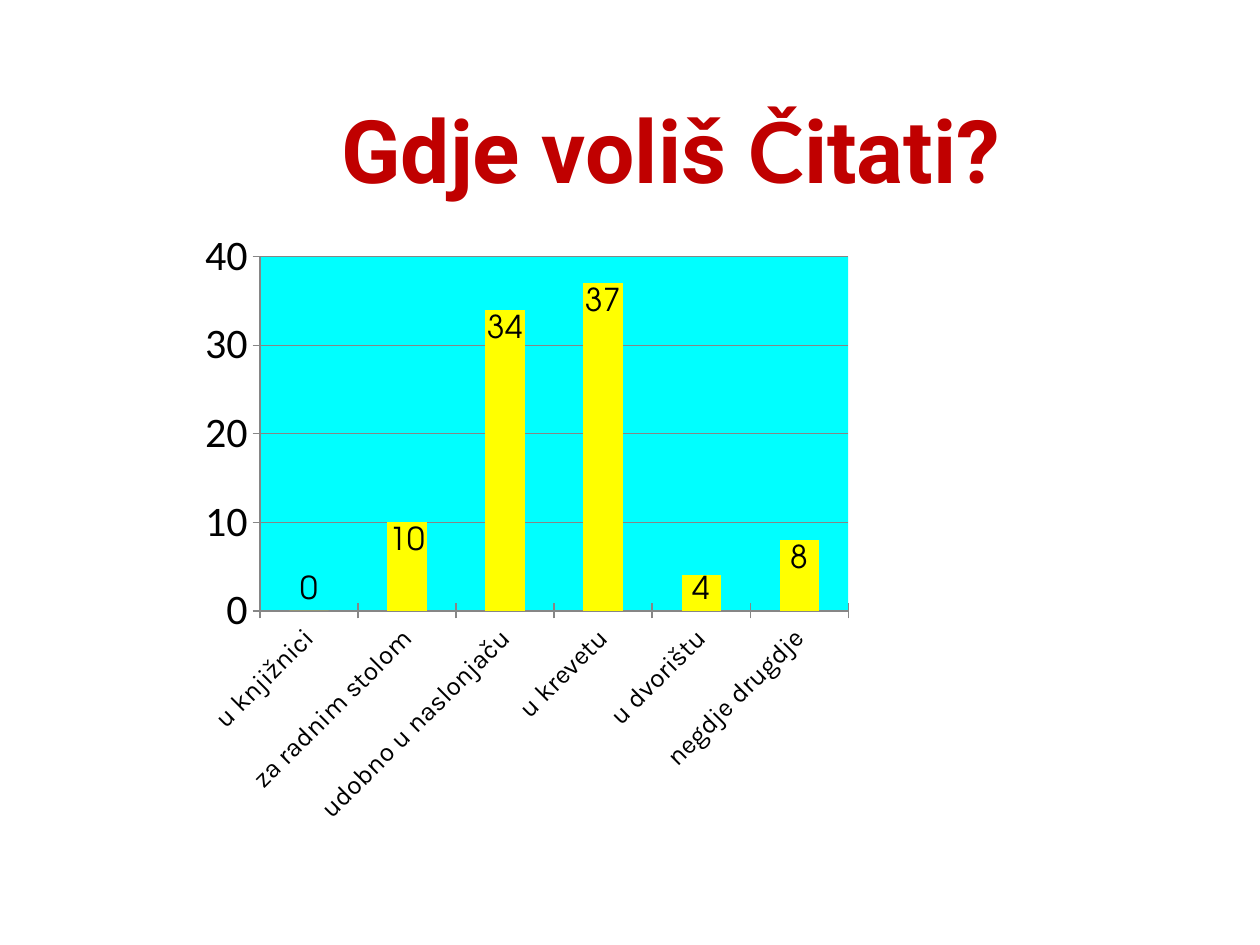
from lxml.etree import fromstring
from pptx import Presentation
from pptx.chart.data import CategoryChartData
from pptx.dml.color import RGBColor
from pptx.enum.chart import XL_CHART_TYPE, XL_LABEL_POSITION, XL_TICK_MARK
from pptx.enum.text import MSO_ANCHOR, PP_ALIGN
from pptx.oxml.ns import nsdecls, qn
from pptx.util import Pt

RED = RGBColor(0xC0, 0x00, 0x00)
CYAN = RGBColor(0x00, 0xFF, 0xFF)
YELLOW = RGBColor(0xFF, 0xFF, 0x00)
BLACK = RGBColor(0x00, 0x00, 0x00)
GREY = RGBColor(0x86, 0x86, 0x86)

PLACES = {
    "u knjižnici": 0,
    "za radnim stolom": 10,
    "udobno u naslonjaču": 34,
    "u krevetu": 37,
    "u dvorištu": 4,
    "negdje drugdje": 8,
}
LOW = (0, 4)


class Deck:
    label_font = "TeX Gyre Adventor"
    label_size = 18

    def __init__(self, width, height):
        self.show = Presentation()
        self.show.slide_width = Pt(width)
        self.show.slide_height = Pt(height)
        self.slide = self.show.slides.add_slide(self.show.slide_layouts[5])

    def style(self, font, name, size, color=BLACK):
        font.name = name
        font.size = Pt(size)
        font.color.rgb = color

    def title(self, box, parts):
        shape = self.slide.shapes.title
        shape.left, shape.top, shape.width, shape.height = map(Pt, box)
        frame = shape.text_frame
        frame.vertical_anchor = MSO_ANCHOR.MIDDLE
        line = frame.paragraphs[0]
        line.alignment = PP_ALIGN.CENTER
        line.font.bold = True
        for text, name, size in parts:
            run = line.add_run()
            run.text = text
            self.style(run.font, name, size, RED)

    def axis(self, axis, name, size):
        axis.major_tick_mark = XL_TICK_MARK.CROSS
        axis.format.line.color.rgb = GREY
        self.style(axis.tick_labels.font, name, size)

    def area(self, chart, left, top, width, height):
        plot = chart._chartSpace.chart.plotArea
        old = plot.find(qn("c:layout"))
        if old is not None:
            plot.remove(old)
        plot.insert(0, fromstring(
            f'<c:layout {nsdecls("c")}><c:manualLayout>'
            '<c:layoutTarget val="inner"/>'
            '<c:xMode val="edge"/><c:yMode val="edge"/>'
            f'<c:x val="{left}"/><c:y val="{top}"/>'
            f'<c:w val="{width}"/><c:h val="{height}"/>'
            '</c:manualLayout></c:layout>'))
        plot.append(fromstring(
            f'<c:spPr {nsdecls("c", "a")}><a:solidFill>'
            f'<a:srgbClr val="{CYAN}"/></a:solidFill></c:spPr>'))

    def chart(self, box, name, values):
        data = CategoryChartData()
        data.categories = list(values)
        data.add_series(name, list(values.values()))
        chart = self.slide.shapes.add_chart(
            XL_CHART_TYPE.COLUMN_STACKED, *map(Pt, box), data).chart
        chart.has_title = False
        chart.has_legend = False
        self.style(chart.font, self.label_font, self.label_size)

        self.axis(chart.category_axis, "Karla", 15)
        body = chart.category_axis._element.find(qn("c:txPr")).find(qn("a:bodyPr"))
        body.set("rot", str(-45 * 60000))
        body.set("vert", "horz")

        scale = chart.value_axis
        self.axis(scale, "Calibri", 24)
        scale.minimum_scale, scale.maximum_scale, scale.major_unit = 0, 40, 10
        scale.has_major_gridlines = True
        scale.major_gridlines.format.line.color.rgb = GREY

        plot = chart.plots[0]
        plot.vary_by_categories = False
        plot.gap_width, plot.overlap = 150, 100
        bars = plot.series[0]
        bars.format.fill.solid()
        bars.format.fill.fore_color.rgb = YELLOW
        labels = bars.data_labels
        labels.show_value = True
        labels.position = XL_LABEL_POSITION.INSIDE_END
        self.style(labels.font, self.label_font, self.label_size)
        for index in LOW:
            label = bars.points[index].data_label
            self.style(label.font, self.label_font, self.label_size)
            label.position = XL_LABEL_POSITION.INSIDE_BASE
        self.area(chart, 0.115, 0.058, 0.812, 0.568)


def main():
    deck = Deck(720, 540)
    deck.title((96, 56, 574.5, 57.5), (
        ("Gdje voliš ", "Roboto", 50),
        ("Č", "Lato", 48),
        ("itati?", "Roboto", 50),
    ))
    deck.chart((101, 126, 414, 356.5), "Series 1", PLACES)
    deck.show.save("out.pptx")


if __name__ == "__main__":
    main()
